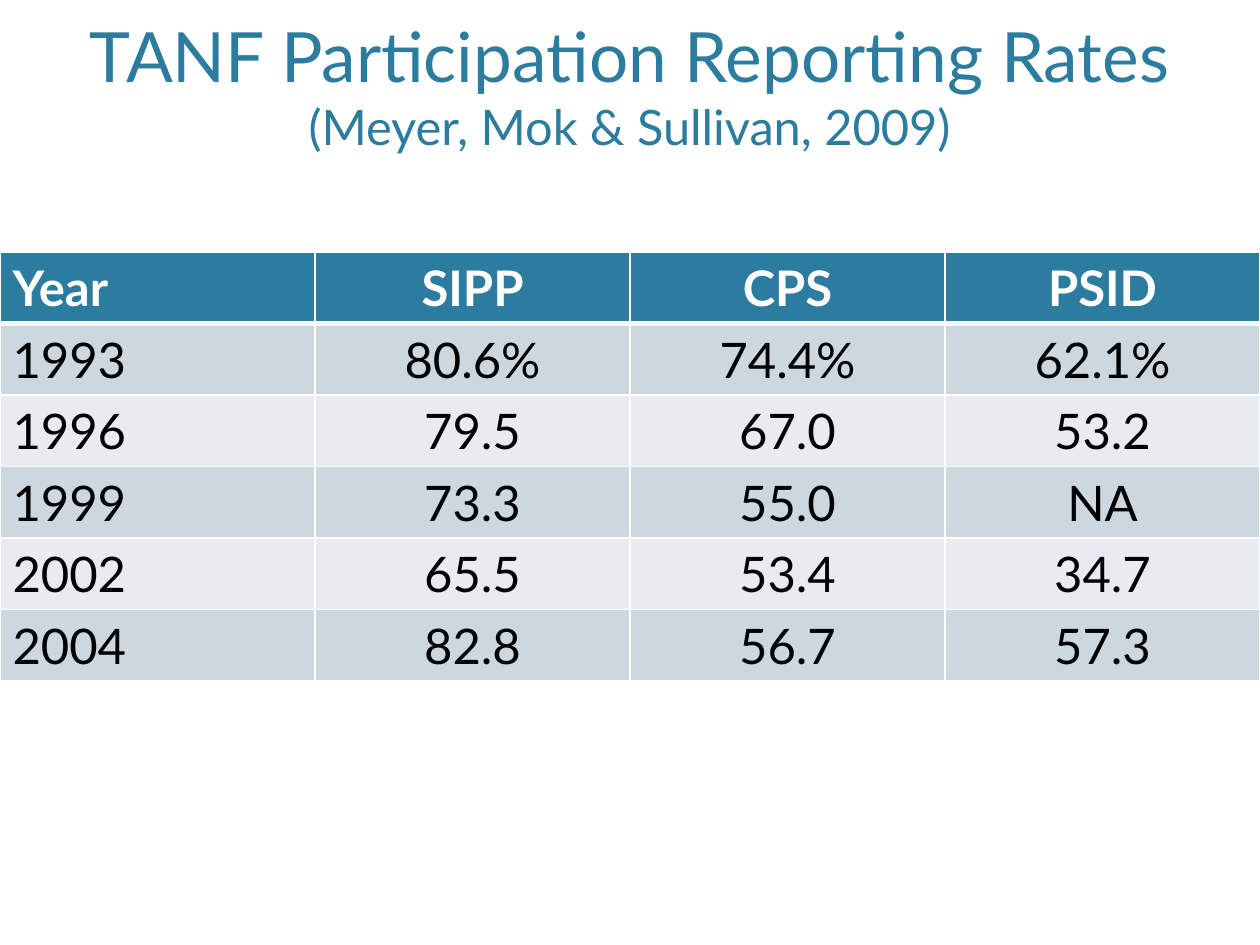
from lxml import etree
from pptx import Presentation
from pptx import util as u
from pptx.dml.color import RGBColor
from pptx.enum import text
from pptx.oxml.ns import qn

COLORS = {
    "accent": "2C7C9F",
    "white": "FFFFFF",
    "black": "000000",
    "dark_band": "CDD7DF",
    "light_band": "E8ECF0",
}
FONT = "Lato"
RATES = [
    ("Year", "SIPP", "CPS", "PSID"),
    ("1993", "80.6%", "74.4%", "62.1%"),
    ("1996", "79.5", "67.0", "53.2"),
    ("1999", "73.3", "55.0", "NA"),
    ("2002", "65.5", "53.4", "34.7"),
    ("2004", "82.8", "56.7", "57.3"),
]


def add_run(paragraph, wording, size, color, bold=False):
    """Append one formatted run to a paragraph."""
    run = paragraph.add_run()
    run.text = wording
    run.font.name = FONT
    run.font.size = u.Pt(size)
    run.font.bold = bold
    run.font.color.rgb = RGBColor.from_string(COLORS[color])


def set_borders(cell, widths):
    """Give a cell white borders, with widths in points keyed by side."""
    properties = cell._tc.get_or_add_tcPr()
    for position, (side, width) in enumerate(widths.items()):
        line = etree.Element(qn(f"a:ln{side}"), w=str(u.Pt(width)))
        fill = etree.SubElement(line, qn("a:solidFill"))
        etree.SubElement(fill, qn("a:srgbClr"), val=COLORS["white"])
        properties.insert(position, line)


def add_title(slide, left, top, width, height):
    """Place the heading and its citation in the given box."""
    shape = slide.shapes.add_textbox(left, top, width, height)
    frame = shape.text_frame
    frame.word_wrap = True
    frame.vertical_anchor = text.MSO_ANCHOR.BOTTOM
    paragraph = frame.paragraphs[0]
    paragraph.alignment = text.PP_ALIGN.CENTER
    add_run(paragraph, "TANF Participation Reporting Rates", 39.6, "accent")
    paragraph.add_line_break()
    add_run(paragraph, "(Meyer, Mok & Sullivan, 2009)", 27.9, "accent")


def add_rates_table(slide, left, top, width, height):
    """Fill the given box with the banded table of reporting rates."""
    shape = slide.shapes.add_table(len(RATES), len(RATES[0]), left, top, width, height)
    for row, values in enumerate(RATES):
        header = row == 0
        band = "accent" if header else "dark_band" if row % 2 else "light_band"
        widths = {"L": 1, "R": 1, "T": 3 if row == 1 else 1, "B": 3 if header else 1}
        for column, value in enumerate(values):
            cell = shape.table.cell(row, column)
            cell.fill.solid()
            cell.fill.fore_color.rgb = RGBColor.from_string(COLORS[band])
            set_borders(cell, widths)
            paragraph = cell.text_frame.paragraphs[0]
            paragraph.alignment = text.PP_ALIGN.CENTER if column else text.PP_ALIGN.LEFT
            add_run(paragraph, value, 28, "white" if header else "black", header)


def main():
    """Build the slide and save the presentation."""
    presentation = Presentation()
    presentation.slide_width = u.Cm(25.4)
    presentation.slide_height = u.Cm(19.05)
    slide = presentation.slides.add_slide(presentation.slide_layouts[6])
    add_title(slide, u.Cm(0.39), u.Cm(0.3), u.Cm(24.61), u.Cm(2.95))
    add_rates_table(slide, 0, u.Cm(5.08), presentation.slide_width, u.Cm(8.64))
    presentation.save("out.pptx")


if __name__ == "__main__":
    main()
